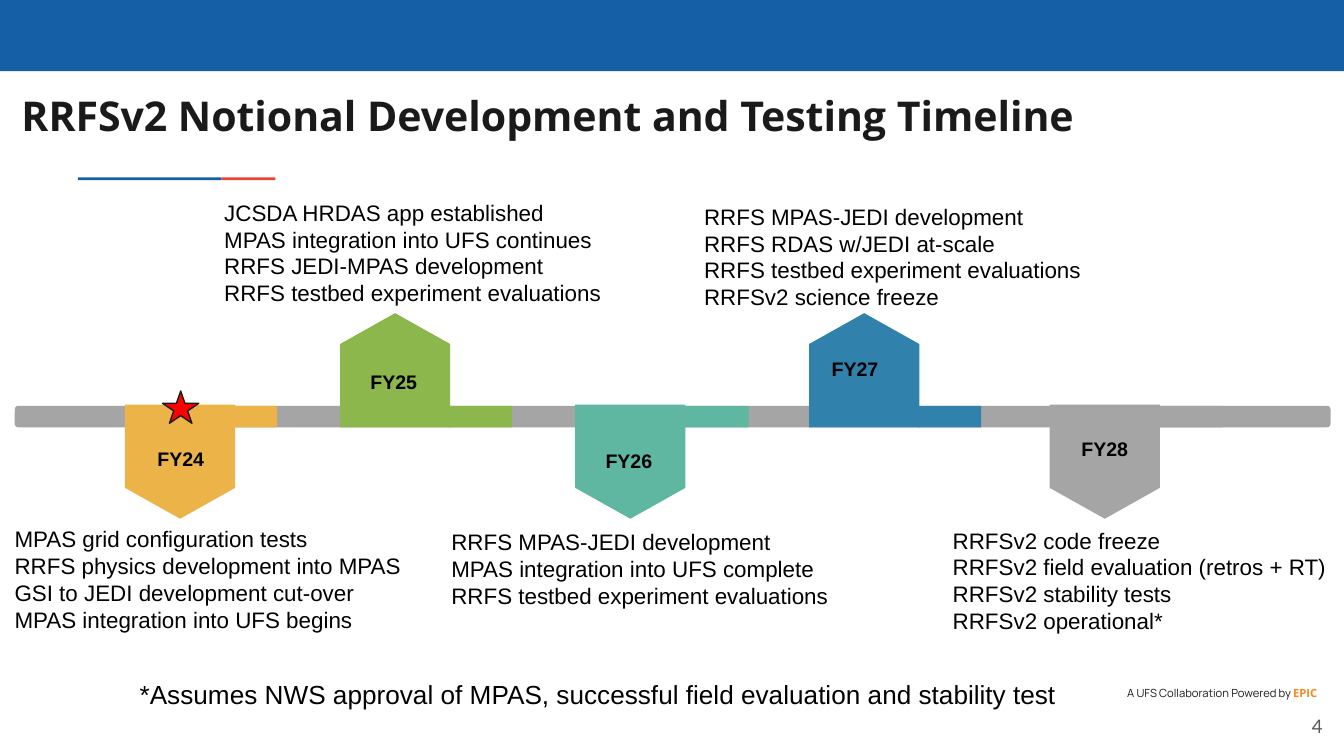
from dataclasses import dataclass
from pptx import Presentation
from pptx.dml.color import RGBColor
from pptx.enum.shapes import MSO_SHAPE as Kind
from pptx.enum.text import MSO_ANCHOR as Anchor, PP_ALIGN as Align
from pptx.util import Emu, Pt

SCALE = 9144  # EMU in one px, 100 px to the inch
WIDE = 1000
HIGH = WIDE * 9 / 16


@dataclass(frozen=True)
class Theme:
    blue: str = "145FA6"
    red: str = "EE4238"
    gray: str = "A5A5A5"
    star: str = "FF0000"
    ink: str = "1A1A1A"
    # Text styles: font name, points, colour, bold
    title: tuple = ("Open Sans", 22, "1A1A1A", True)
    year: tuple = ("Arial", 10.5, "000000", True)
    note: tuple = ("Arial", 12, "000000", False)
    foot: tuple = ("Arial", 14, "000000", False)
    credit: tuple = ("Manrope", 6, "1A1A1A", False)
    brand: tuple = ("Open Sans", 6, "F68822", True)
    page: tuple = ("Lato", 10, "595959", False)


T = Theme()
TITLE = "RRFSv2 Notional Development and Testing Timeline"
FOOT = "*Assumes NWS approval of MPAS, successful field evaluation and stability test"
CREDIT = [("A UFS Collaboration Powered by ", T.credit), ("EPIC", T.brand)]

# mid: centre of the flag; end: right end of its strip on the bar
YEARS = [
    dict(name="FY24", color="ECB448", mid=134, end=206, up=False,
         label=(83, 328, 103, 30), box=(1, 386, 311, 91),
         notes=["MPAS grid configuration tests",
                "RRFS physics development into MPAS",
                "GSI to JEDI development cut-over",
                "MPAS integration into UFS begins"]),
    dict(name="FY25", color="8BB74C", mid=294, end=381, up=True,
         label=(245, 270, 96, 30), box=(157, 143, 303, 91),
         notes=["JCSDA HRDAS app established",
                "MPAS integration into UFS continues",
                "RRFS JEDI-MPAS development",
                "RRFS testbed experiment evaluations"]),
    dict(name="FY26", color="5FB7A2", mid=469, end=557, up=False,
         label=(420, 329, 96, 30), box=(326, 388, 301, 71),
         notes=["RRFS MPAS-JEDI development",
                "MPAS integration into UFS complete",
                "RRFS testbed experiment evaluations"]),
    dict(name="FY27", color="3081AC", mid=643, end=730, up=True,
         label=(609, 261, 103, 30), box=(514, 146, 301, 91),
         notes=["RRFS MPAS-JEDI development",
                "RRFS RDAS w/JEDI at-scale",
                "RRFS testbed experiment evaluations",
                "RRFSv2 science freeze"]),
    dict(name="FY28", color=T.gray, mid=822, end=910, up=False,
         label=(781, 320, 82, 43), box=(699, 387, 301, 91),
         notes=["RRFSv2 code freeze",
                "RRFSv2 field evaluation (retros + RT)",
                "RRFSv2 stability tests",
                "RRFSv2 operational*"]),
]
BAR = (11, 302, 979, 16)
FLAG_LONG, FLAG_WIDE = 85, 82
FLAG_TOP = {True: 233, False: 301}  # keyed by whether the flag points up


def px(n):
    return Emu(round(n * SCALE))


def shape(kind, at, color, line=None):
    item = slide.shapes.add_shape(kind, *map(px, at))
    item.shadow.inherit = False
    item.fill.solid()
    item.fill.fore_color.rgb = RGBColor.from_string(color)
    if line:
        item.line.color.rgb = RGBColor.from_string(line)
        item.line.width = Pt(0.75)
    else:
        item.line.fill.background()
    return item


def write(frame, lines, align=Align.LEFT, pad=(10, 5), anchor=Anchor.TOP, gap=1.0):
    """Fill a text frame; each line is a list of (text, style) runs."""
    values = dict(word_wrap=True, vertical_anchor=anchor,
                  margin_left=px(pad[0]), margin_right=px(pad[0]),
                  margin_top=px(pad[1]), margin_bottom=px(pad[1]))
    for key, value in values.items():
        setattr(frame, key, value)
    for i, runs in enumerate(lines):
        para = frame.add_paragraph() if i else frame.paragraphs[0]
        para.alignment, para.line_spacing = align, gap
        for words, (name, size, color, bold) in runs:
            run = para.add_run()
            run.text = words
            for key, value in dict(name=name, size=Pt(size), bold=bold).items():
                setattr(run.font, key, value)
            run.font.color.rgb = RGBColor.from_string(color)


def text(at, lines, **look):
    write(slide.shapes.add_textbox(*map(px, at)).text_frame, lines, **look)


def flag(year):
    """Draw a year's pentagon and the strip joining it to the bar."""
    mid, up = year["mid"], year["up"]
    # The pentagon is laid out pointing right, then turned about its centre
    top = FLAG_TOP[up] + (FLAG_LONG - FLAG_WIDE) / 2
    plate = shape(Kind.PENTAGON, (mid - FLAG_LONG / 2, top, FLAG_LONG, FLAG_WIDE),
                  year["color"])
    plate.adjustments[0] = 0.28
    plate.rotation = 270 if up else 90
    start = mid + FLAG_WIDE / 2 - 1
    shape(Kind.RECTANGLE, (start, BAR[1], year["end"] - start, BAR[3]), year["color"])


deck = Presentation()
deck.slide_width, deck.slide_height = px(WIDE), px(HIGH)
slide = deck.slides.add_slide(deck.slide_layouts[5])

title = slide.shapes.title
for side, n in dict(left=6, top=64, width=841, height=59).items():
    setattr(title, side, px(n))
write(title.text_frame, [[(TITLE, T.title)]], pad=(10, 10), gap=0.8)
# Turn off the kerning that the layout gives to titles
title.text_frame.paragraphs[0].runs[0].font._element.set("kern", "0")

shape(Kind.RECTANGLE, (0, 0, WIDE, 53), T.blue)
shape(Kind.RECTANGLE, (58, 132, 107, 2), T.blue)
shape(Kind.RECTANGLE, (165, 132, 40, 2), T.red)
shape(Kind.ROUNDED_RECTANGLE, BAR, T.gray)

for year in YEARS:
    flag(year)
    align = Align.LEFT if year["name"] == "FY27" else Align.CENTER
    text(year["label"], [[(year["name"], T.year)]], align=align)
    text(year["box"], [[(note, T.note)] for note in year["notes"]])
shape(Kind.STAR_5_POINT, (121, 291, 27, 24), T.star, T.ink)

text((94, 500, 715, 34), [[(FOOT, T.foot)]])
text((781, 511, 199, 10), [CREDIT], align=Align.RIGHT, pad=(0, 0))
text((934, 519, 60, 43), [[("4", T.page)]], align=Align.RIGHT,
     pad=(10, 10), anchor=Anchor.MIDDLE)

deck.save("out.pptx")
